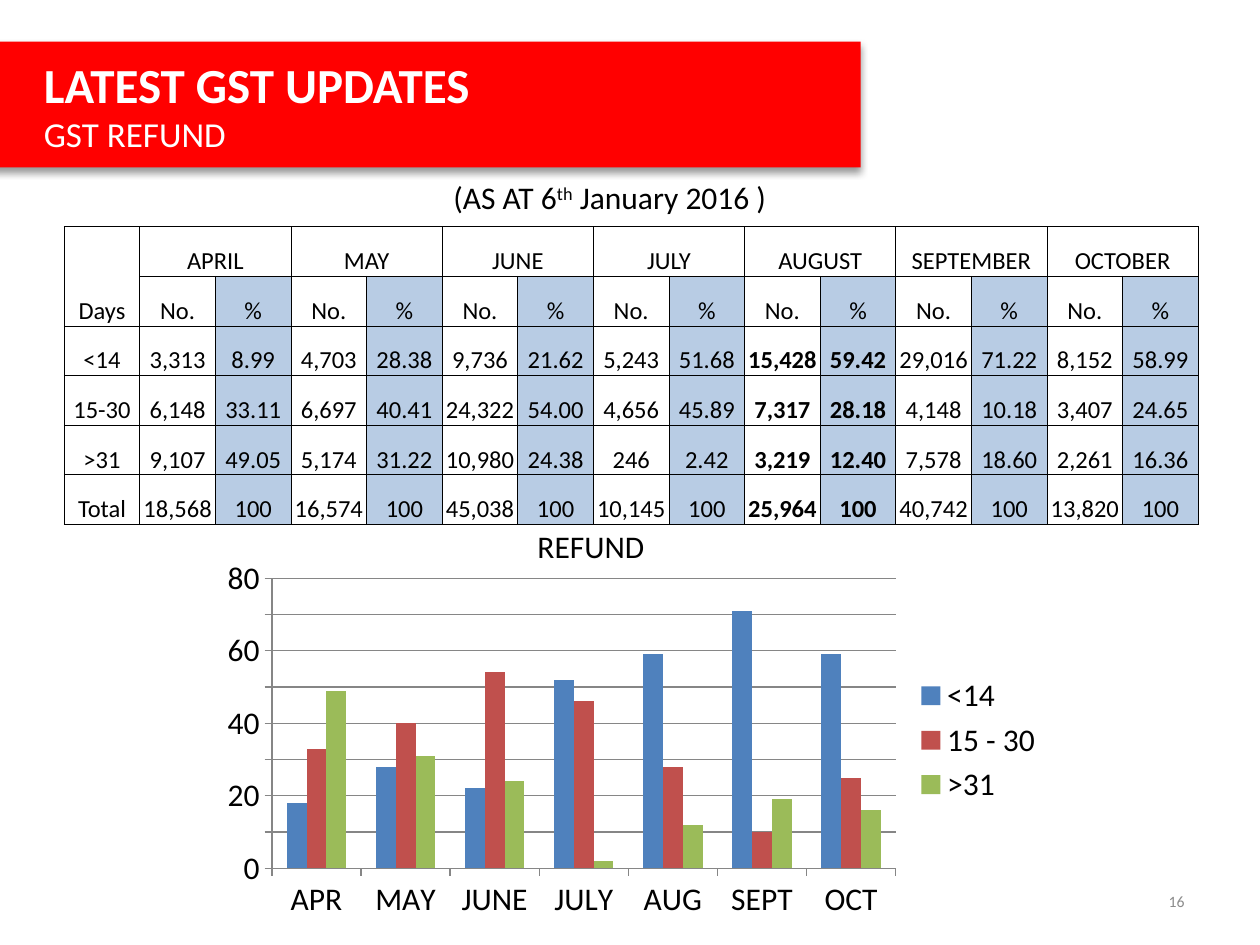
from lxml import etree
from pptx import Presentation
from pptx.chart.data import CategoryChartData
from pptx.dml.color import RGBColor
from pptx.enum.chart import XL_CHART_TYPE, XL_LEGEND_POSITION, XL_TICK_MARK
from pptx.enum.shapes import MSO_SHAPE
from pptx.enum.text import MSO_ANCHOR, PP_ALIGN
from pptx.oxml import parse_xml
from pptx.oxml.ns import nsdecls, qn
from pptx.util import Inches, Pt

CLUSTERED = XL_CHART_TYPE.COLUMN_CLUSTERED
LEGEND_RIGHT = XL_LEGEND_POSITION.RIGHT
TICK_OUTSIDE = XL_TICK_MARK.OUTSIDE
RECTANGLE = MSO_SHAPE.RECTANGLE
MIDDLE, BOTTOM = MSO_ANCHOR.MIDDLE, MSO_ANCHOR.BOTTOM
LEFT, CENTER, RIGHT = PP_ALIGN.LEFT, PP_ALIGN.CENTER, PP_ALIGN.RIGHT

FONT = "Calibri"
COLORS = {
    "black": "000000",
    "white": "FFFFFF",
    "banner": "FF0000",
    "percent": "B8CCE4",
    "number": "8C8C8C",
    "grid": "868686",
}
MONTHS = ["APRIL", "MAY", "JUNE", "JULY", "AUGUST", "SEPTEMBER", "OCTOBER"]
BOLD_MONTH = "AUGUST"
REFUND_ROWS = [
    ["<14", "3,313", "8.99", "4,703", "28.38", "9,736", "21.62", "5,243", "51.68",
     "15,428", "59.42", "29,016", "71.22", "8,152", "58.99"],
    ["15-30", "6,148", "33.11", "6,697", "40.41", "24,322", "54.00", "4,656", "45.89",
     "7,317", "28.18", "4,148", "10.18", "3,407", "24.65"],
    [">31", "9,107", "49.05", "5,174", "31.22", "10,980", "24.38", "246", "2.42",
     "3,219", "12.40", "7,578", "18.60", "2,261", "16.36"],
    ["Total", "18,568", "100", "16,574", "100", "45,038", "100", "10,145", "100",
     "25,964", "100", "40,742", "100", "13,820", "100"],
]
CHART_MONTHS = ["APR", "MAY", "JUNE", "JULY", "AUG", "SEPT", "OCT"]
CHART_SERIES = [
    ("<14", [18, 28, 22, 52, 59, 71, 59], "4F81BD"),
    ("15 - 30", [33, 40, 54, 46, 28, 10, 25], "C0504D"),
    (">31", [49, 31, 24, 2, 12, 19, 16], "9BBB59"),
]
PLOT_AREA = {"x": 0.07, "y": 0.07, "w": 0.74, "h": 0.77}


def rgb(name):
    return RGBColor.from_string(COLORS[name])


def add_text(para, text, size=18, color="black", bold=False, align=LEFT, baseline=0):
    para.alignment = align
    span = para.add_run()
    span.text = text
    span.font.name = FONT
    span.font.size = Pt(size)
    span.font.bold = bold
    span.font.color.rgb = rgb(color)
    if baseline:
        span.font._element.set("baseline", str(baseline * 1000))


def add_box(page, left, top, width, height):
    box = page.shapes.add_textbox(Inches(left), Inches(top), Inches(width), Inches(height))
    box.text_frame.word_wrap = True
    box.text_frame.vertical_anchor = MIDDLE
    return box.text_frame.paragraphs[0]


def add_banner(page):
    banner = page.shapes.add_shape(
        RECTANGLE, Inches(-0.25), Inches(0.33), Inches(7.08), Inches(1))
    banner.fill.solid()
    banner.fill.fore_color.rgb = rgb("banner")
    banner.line.fill.background()
    banner.shadow.inherit = False
    effects = banner._element.spPr.find(qn("a:effectLst"))
    effects.append(parse_xml(
        f'<a:outerShdw {nsdecls("a")} blurRad="{Pt(4)}" dist="{Pt(3)}" dir="5400000" '
        f'rotWithShape="0"><a:srgbClr val="{COLORS["black"]}">'
        '<a:alpha val="40000"/></a:srgbClr></a:outerShdw>'))
    frame = banner.text_frame
    frame.word_wrap = True
    frame.vertical_anchor = MIDDLE
    heading, subheading = frame.paragraphs[0], frame.add_paragraph()
    for para in (heading, subheading):
        para.level = 1
        properties = para._p.get_or_add_pPr()
        properties.set("marL", str(Inches(0.5)))
        properties.set("indent", "0")
    add_text(heading, "LATEST GST UPDATES", size=28, color="white", bold=True)
    add_text(subheading, "GST REFUND", size=20, color="white")


def add_borders(cell):
    properties = cell._tc.get_or_add_tcPr()
    for position, side in enumerate(("lnL", "lnR", "lnT", "lnB")):
        properties.insert(position, parse_xml(
            f'<a:{side} {nsdecls("a")} w="{Pt(0.5)}"><a:solidFill>'
            f'<a:srgbClr val="{COLORS["black"]}"/></a:solidFill></a:{side}>'))


def format_cell(cell, text, shaded, bold):
    cell.margin_left = cell.margin_right = cell.margin_top = Inches(0.01)
    cell.margin_bottom = 0
    cell.vertical_anchor = BOTTOM
    if shaded:
        cell.fill.solid()
        cell.fill.fore_color.rgb = rgb("percent")
    else:
        cell.fill.background()
    add_borders(cell)
    if text:
        add_text(cell.text_frame.paragraphs[0], text, size=14, bold=bold, align=CENTER)


def add_refund_table(page):
    month_row = ["Days"] + [text for month in MONTHS for text in (month, "")]
    unit_row = [""] + ["No.", "%"] * len(MONTHS)
    rows = [month_row, unit_row] + REFUND_ROWS
    table = page.shapes.add_table(
        len(rows), len(month_row), Inches(0.51), Inches(1.8), Inches(9), Inches(2.36)).table
    table.first_row = table.horz_banding = False
    for column in table.columns:
        column.width = Inches(0.6)
    for row in table.rows:
        row.height = Inches(2.36 / len(rows))
    first_bold = 1 + 2 * MONTHS.index(BOLD_MONTH)
    for row_index, row in enumerate(rows):
        for column_index, text in enumerate(row):
            shaded = row_index > 0 and column_index > 0 and column_index % 2 == 0
            bold = row_index > 1 and column_index in (first_bold, first_bold + 1)
            format_cell(table.cell(row_index, column_index), text, shaded, bold)
    table.cell(0, 0).merge(table.cell(1, 0))
    for column_index in range(1, len(month_row), 2):
        table.cell(0, column_index).merge(table.cell(0, column_index + 1))


def place_plot(chart):
    plot_area = chart._chartSpace.chart.plotArea
    for old_layout in plot_area.findall(qn("c:layout")):
        plot_area.remove(old_layout)
    layout = etree.Element(qn("c:layout"))
    manual = etree.SubElement(layout, qn("c:manualLayout"))
    settings = {"layoutTarget": "inner", "xMode": "edge", "yMode": "edge", **PLOT_AREA}
    for tag, value in settings.items():
        etree.SubElement(manual, qn(f"c:{tag}")).set("val", str(value))
    plot_area.insert(0, layout)


def add_refund_chart(page):
    data = CategoryChartData()
    data.categories = CHART_MONTHS
    for name, values, _ in CHART_SERIES:
        data.add_series(name, values)
    chart = page.shapes.add_chart(
        CLUSTERED, Inches(1.69), Inches(4.38), Inches(6.69), Inches(2.99), data).chart
    chart.has_title = False
    chart.font.name = FONT
    chart.font.size = Pt(18)
    chart.font.color.rgb = rgb("black")
    chart.has_legend = True
    chart.legend.position = LEGEND_RIGHT
    chart.legend.include_in_layout = False
    plot = chart.plots[0]
    plot.gap_width = 150
    plot.overlap = 0
    plot.vary_by_categories = False
    for series, (_, _, color) in zip(plot.series, CHART_SERIES):
        series.format.fill.solid()
        series.format.fill.fore_color.rgb = RGBColor.from_string(color)
    values_axis = chart.value_axis
    values_axis.minimum_scale, values_axis.maximum_scale = 0, 80
    values_axis.major_unit = 10
    values_axis.has_major_gridlines = True
    values_axis.major_gridlines.format.line.color.rgb = rgb("grid")
    for axis in (chart.category_axis, values_axis):
        axis.major_tick_mark = TICK_OUTSIDE
        axis.format.line.color.rgb = rgb("grid")
    place_plot(chart)


def main():
    deck = Presentation()
    deck.slide_width, deck.slide_height = Inches(10), Inches(7.5)
    page = deck.slides.add_slide(deck.slide_layouts[6])
    add_refund_chart(page)
    add_refund_table(page)
    add_text(add_box(page, 3.43, 4.14, 2.52, 0.39), "REFUND", align=CENTER)
    date = add_box(page, 2.24, 1.33, 5.2, 0.47)
    for text, baseline in (("(AS AT 6", 0), ("th", 30), (" January 2016 )", 0)):
        add_text(date, text, align=CENTER, baseline=baseline)
    add_banner(page)
    add_text(add_box(page, 7.17, 6.95, 2.33, 0.4), "16", size=9, color="number", align=RIGHT)
    deck.save("out.pptx")


if __name__ == "__main__":
    main()
